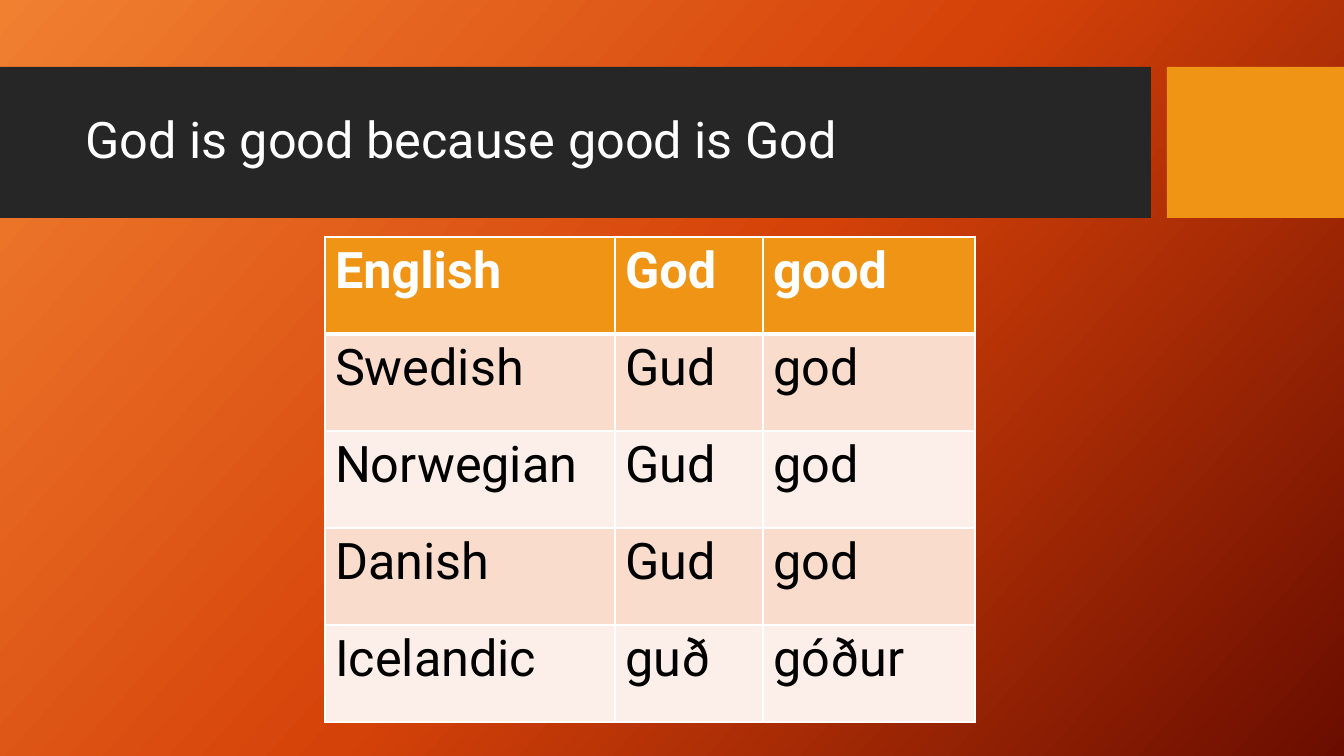
from copy import deepcopy

from pptx import Presentation
from pptx.dml.color import RGBColor
from pptx.enum.shapes import MSO_SHAPE as Shape
from pptx.enum.text import MSO_ANCHOR as Anchor, PP_ALIGN as Align
from pptx.oxml import parse_xml
from pptx.oxml.ns import nsdecls
from pptx.util import Emu, Pt

TITLE = "God is good because good is God"
WORDS = [
    ("English", "God", "good"),
    ("Swedish", "Gud", "god"),
    ("Norwegian", "Gud", "god"),
    ("Danish", "Gud", "god"),
    ("Icelandic", "guð", "góður"),
]
GRADIENT = [(0, "F18031"), (0.5, "D54209"), (1, "6A0D00")]
GRADIENT_ANGLE = 42
BANDS = [((0, 67, 1151, 151), "262626"), ((1167, 67, 177, 151), "F09415")]
TITLE_BOX = (75, 83, 1059, 119)
TABLE_LEFT, TABLE_TOP = 325, 237
COLUMN_WIDTHS = (290, 148, 212)
ROW_HEIGHT = 97
HEADER_FILL = "F09415"
ROW_FILLS = ("FCEEE8", "F9DCCC")


def px(length):
    """Turn a length in px into EMU."""
    return Emu(round(length * 914400 / 100.8))


def color(value):
    """Turn a hex string into a colour."""
    return RGBColor.from_string(value)


def write(frame, text, font_color="000000", bold=False, size=36, spacing=1.0):
    """Put formatted text into a text frame."""
    frame.word_wrap = True
    paragraph = frame.paragraphs[0]
    paragraph.alignment = Align.LEFT
    paragraph.line_spacing = spacing
    run = paragraph.add_run()
    run.text = text
    run.font.name = "Roboto"
    run.font.size = Pt(size)
    run.font.bold = bold
    run.font.color.rgb = color(font_color)


def paint_background(slide):
    """Fill the slide background with the diagonal gradient."""
    fill = slide.background.fill
    fill.gradient()
    fill.gradient_angle = 360 - GRADIENT_ANGLE
    stop_list = slide.element.find(".//{*}gsLst")
    stop_list.append(deepcopy(stop_list[-1]))
    for stop, (position, value) in zip(fill.gradient_stops, GRADIENT):
        stop.position = position
        stop.color.rgb = color(value)


def add_title(slide):
    """Place the title over its two bands."""
    title = slide.shapes.title
    for box, value in BANDS:
        band = slide.shapes.add_shape(Shape.RECTANGLE, *map(px, box))
        band.shadow.inherit = False
        band.fill.solid()
        band.fill.fore_color.rgb = color(value)
        band.line.fill.background()
        title.element.addprevious(band.element)
    title.left, title.top, title.width, title.height = map(px, TITLE_BOX)
    title.text_frame.vertical_anchor = Anchor.MIDDLE
    write(title.text_frame, TITLE, font_color="FFFFFF", spacing=0.9)


def add_borders(cell, top, bottom):
    """Draw white lines around a cell."""
    properties = cell._tc.get_or_add_tcPr()
    for side, width in (("L", 1), ("R", 1), ("T", top), ("B", bottom)):
        properties.append(parse_xml(
            f'<a:ln{side} {nsdecls("a")} w="{Pt(width)}"><a:solidFill>'
            f'<a:srgbClr val="FFFFFF"/></a:solidFill></a:ln{side}>'))


def add_words(slide):
    """Add the table of words."""
    frame = slide.shapes.add_table(
        len(WORDS), len(COLUMN_WIDTHS), px(TABLE_LEFT), px(TABLE_TOP),
        px(sum(COLUMN_WIDTHS)), px(ROW_HEIGHT * len(WORDS)))
    table = frame.table
    for column, width in zip(table.columns, COLUMN_WIDTHS):
        column.width = px(width)
    for index, words in enumerate(WORDS):
        table.rows[index].height = px(ROW_HEIGHT)
        header = index == 0
        for cell, word in zip(table.rows[index].cells, words):
            add_borders(cell, 3 if index == 1 else 1, 3 if header else 1)
            cell.fill.solid()
            cell.fill.fore_color.rgb = color(HEADER_FILL if header else ROW_FILLS[index % 2])
            write(cell.text_frame, word, font_color="FFFFFF" if header else "000000", bold=header)


def main():
    """Build and save the slide."""
    presentation = Presentation()
    presentation.slide_width, presentation.slide_height = px(1344), px(756)
    slide = presentation.slides.add_slide(presentation.slide_layouts[5])
    paint_background(slide)
    add_title(slide)
    add_words(slide)
    presentation.save("out.pptx")


if __name__ == "__main__":
    main()
